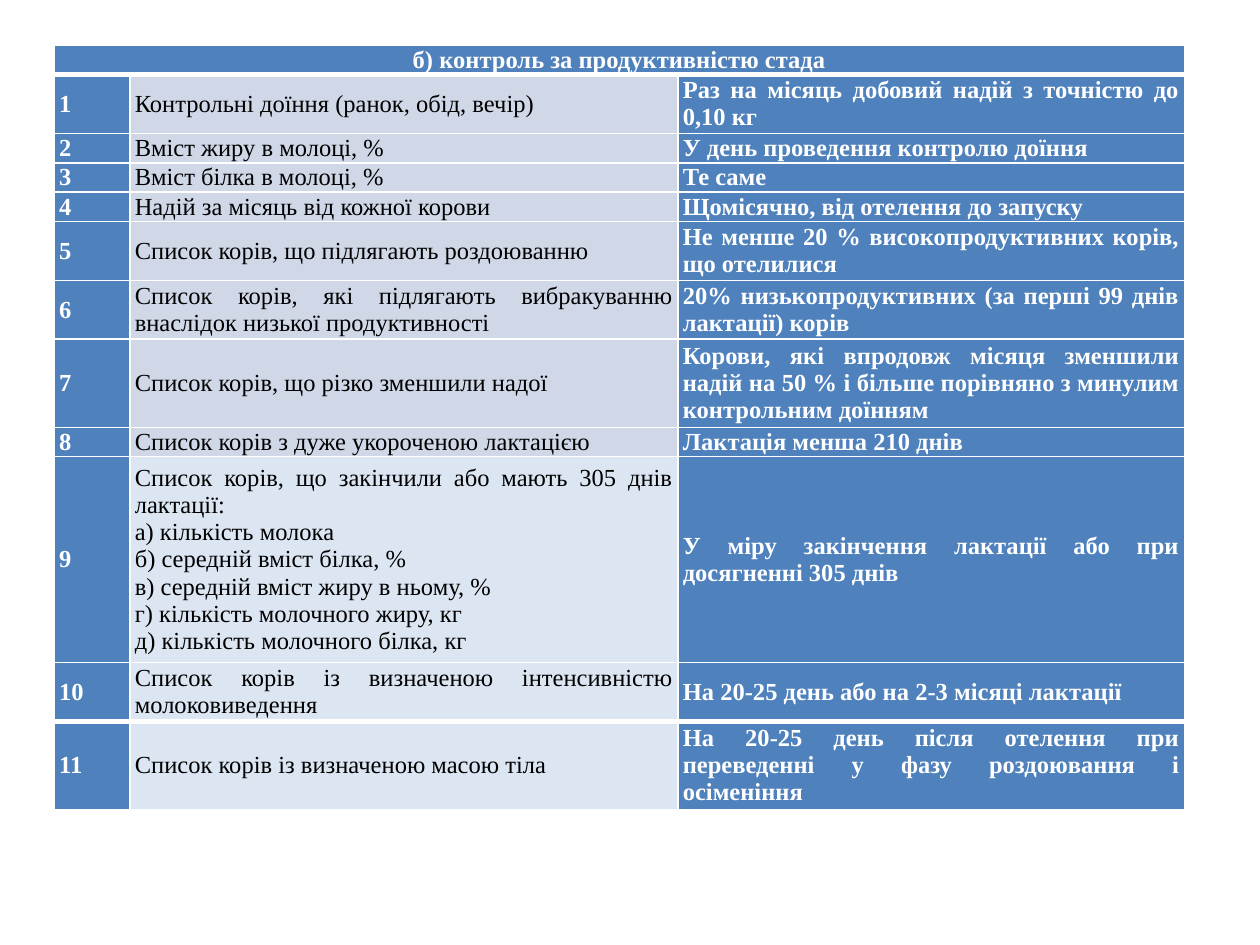
import pptx
import pptx.util
import pptx.dml.color
import pptx.enum.text
import pptx.oxml.ns
import lxml.etree

Inches, Pt = pptx.util.Inches, pptx.util.Pt
ALIGN = pptx.enum.text.PP_ALIGN

# Content: lines of text the row holds, item, timing
HEADING = "б) контроль за продуктивністю стада"
ROWS = [
    (2, "Контрольні доїння (ранок, обід, вечір)",
     "Раз на місяць добовий надій з точністю до 0,10 кг"),
    (1, "Вміст жиру в молоці, %", "У день проведення контролю доїння"),
    (1, "Вміст білка в молоці, %", "Те саме"),
    (1, "Надій за місяць від кожної корови", "Щомісячно, від отелення до запуску"),
    (2, "Список корів, що підлягають роздоюванню",
     "Не менше 20 % високопродуктивних корів, що отелилися"),
    (2, "Список корів, які підлягають вибракуванню внаслідок низької продуктивності",
     "20% низькопродуктивних (за перші 99 днів лактації) корів"),
    (3, "Список корів, що різко зменшили надої",
     "Корови, які впродовж місяця зменшили надій на 50 % і більше "
     "порівняно з минулим контрольним доїнням"),
    (1, "Список корів з дуже укороченою лактацією", "Лактація менша 210 днів"),
    (7, "Список корів, що закінчили або мають 305 днів лактації:\n"
        "а) кількість молока\n"
        "б) середній вміст білка, %\n"
        "в) середній вміст жиру в ньому, %\n"
        "г) кількість молочного жиру, кг\n"
        "д) кількість молочного білка, кг",
     "У міру закінчення лактації або при досягненні 305 днів"),
    (2, "Список корів із визначеною інтенсивністю молоковиведення",
     "На 20-25 день або на 2-3 місяці лактації"),
    (3, "Список корів із визначеною масою тіла",
     "На 20-25 день після отелення при переведенні у фазу роздоювання і осіменіння"),
]
COLORS = {"blue": "4F81BD", "band": "D0D8E8", "light": "DCE6F2",
          "white": "FFFFFF", "black": "000000"}
FIRST_LIGHT = 9
LEFT, TOP = 0.43, 0.36
COL_WIDTHS = [0.6, 4.35, 4.02]
LINE_HEIGHT = 6.07 / (1 + sum(row[0] for row in ROWS))
CELL = {"margin_left": Inches(0.04), "margin_right": Inches(0.04),
        "margin_top": 0, "margin_bottom": 0,
        "vertical_anchor": pptx.enum.text.MSO_ANCHOR.MIDDLE}
FONT = {"name": "Times New Roman", "size": Pt(14)}


def rgb(name):
    return pptx.dml.color.RGBColor.from_string(COLORS[name])


def set_borders(cell, top=1, bottom=1):
    tc_pr = cell._tc.get_or_add_tcPr()
    for side, width in (("L", 1), ("R", 1), ("T", top), ("B", bottom)):
        ln = lxml.etree.SubElement(tc_pr, pptx.oxml.ns.qn(f"a:ln{side}"), w=str(Pt(width)))
        fill = lxml.etree.SubElement(ln, pptx.oxml.ns.qn("a:solidFill"))
        lxml.etree.SubElement(fill, pptx.oxml.ns.qn("a:srgbClr"), val=COLORS["white"])


def fill_cell(cell, text, fill="blue", color="white", bold=True,
              align=ALIGN.JUSTIFY, **borders):
    for name, value in CELL.items():
        setattr(cell, name, value)
    set_borders(cell, **borders)
    cell.fill.solid()
    cell.fill.fore_color.rgb = rgb(fill)
    cell.text_frame.text = text
    for p in cell.text_frame.paragraphs:
        p.alignment = align
        for r in p.runs:
            for name, value in {**FONT, "bold": bold}.items():
                setattr(r.font, name, value)
            r.font.color.rgb = rgb(color)


prs = pptx.Presentation()
prs.slide_width, prs.slide_height = Inches(10), Inches(7.5)
s = prs.slides.add_slide(prs.slide_layouts[6])

# Table grid: each row is as tall as its lines of text
lines = [1] + [row[0] for row in ROWS]
table = s.shapes.add_table(
    len(lines), len(COL_WIDTHS), Inches(LEFT), Inches(TOP),
    Inches(sum(COL_WIDTHS)), Inches(LINE_HEIGHT * sum(lines))).table
for column, width in zip(table.columns, COL_WIDTHS):
    column.width = Inches(width)
for row, count in zip(table.rows, lines):
    row.height = Inches(LINE_HEIGHT * count)

# Heading across all columns
for col in range(len(COL_WIDTHS)):
    fill_cell(table.cell(0, col), "" if col else HEADING, align=ALIGN.CENTER, bottom=3)
table.cell(0, 0).merge(table.cell(0, len(COL_WIDTHS) - 1))

# Numbered rows, with thick rules under the heading and above the last row
last = len(ROWS)
for n, (_, item, timing) in enumerate(ROWS, 1):
    borders = {"top": 3 if n in (1, last) else 1, "bottom": 3 if n == last - 1 else 1}
    fill_cell(table.cell(n, 0), str(n), **borders)
    fill_cell(table.cell(n, 1), item, fill="light" if n >= FIRST_LIGHT else "band",
              color="black", bold=False, **borders)
    fill_cell(table.cell(n, 2), timing, **borders)

prs.save("out.pptx")
